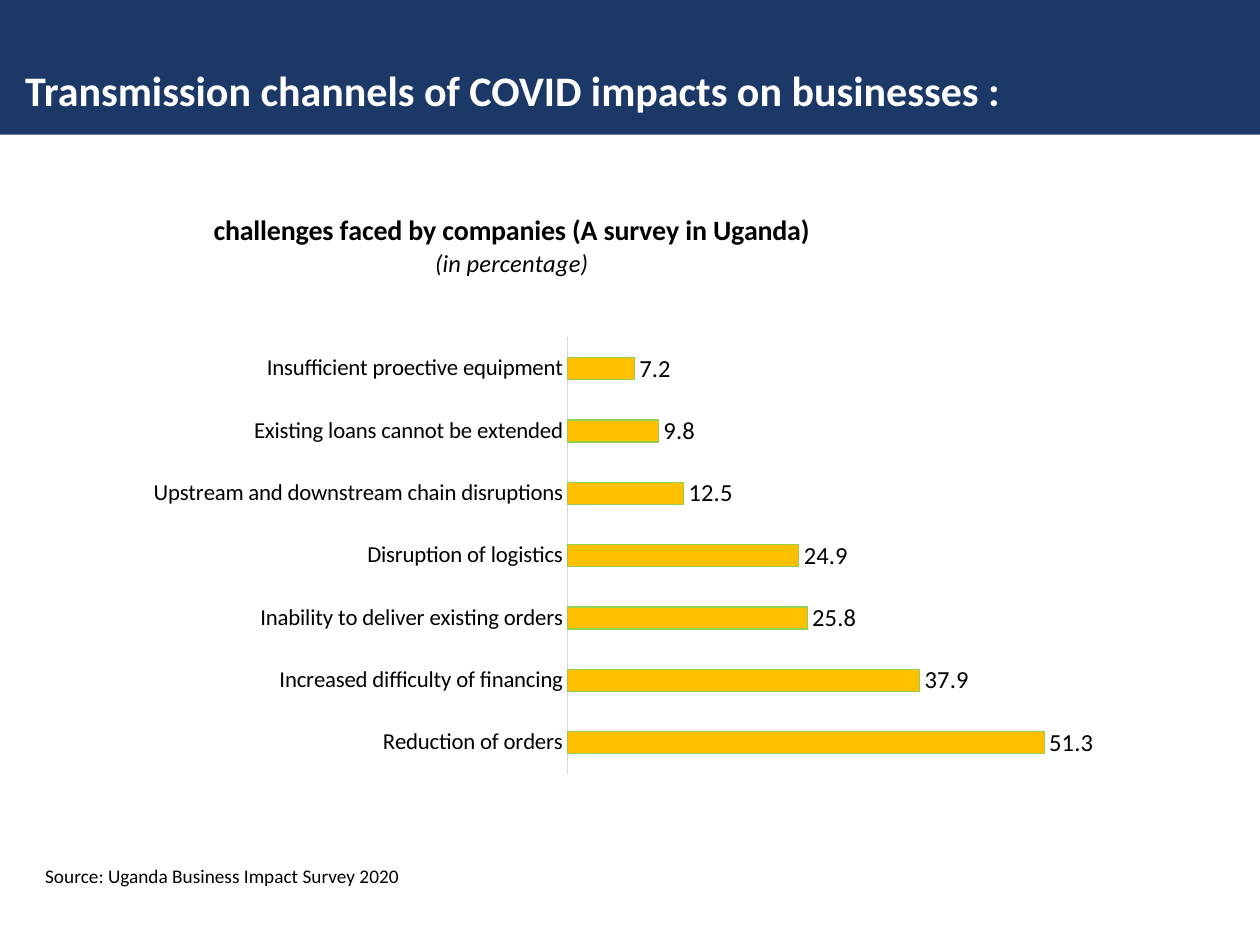
import pptx
import pptx.chart.data
import pptx.dml.color
import pptx.enum.chart
import pptx.enum.shapes
import pptx.enum.text
import pptx.oxml
import pptx.oxml.ns
import pptx.util

WIDTH, HEIGHT = pptx.util.Inches(10), pptx.util.Inches(7.5)
NAVY, GOLD, GREEN, GREY = "1C3867", "FFC000", "92D050", "D9D9D9"
BLACK, WHITE = "000000", "FFFFFF"


def color(hex_string):
    return pptx.dml.color.RGBColor.from_string(hex_string)


def set_layout(element, index, values):
    """Place a chart part by shares of the chart's size, given as layout tags."""
    for old in element.findall(pptx.oxml.ns.qn("c:layout")):
        element.remove(old)
    tags = "".join(f'<c:{tag} val="{value}"/>' for tag, value in values.items())
    element.insert(index, pptx.oxml.parse_xml(
        f'<c:layout {pptx.oxml.ns.nsdecls("c")}>'
        f'<c:manualLayout>{tags}</c:manualLayout></c:layout>'))


presentation = pptx.Presentation()
presentation.slide_width, presentation.slide_height = WIDTH, HEIGHT
slide = presentation.slides.add_slide(presentation.slide_layouts[6])

# Header band
band = slide.shapes.add_shape(
    pptx.enum.shapes.MSO_SHAPE.RECTANGLE, 0, 0, WIDTH, pptx.util.Inches(1.07))
band.shadow.inherit = False
band.fill.solid()
band.fill.fore_color.rgb = color(NAVY)
band.line.fill.background()

# Heading and source note: text, box in inches, size, bold, colour, margins
texts = [
    ("Transmission channels of COVID impacts on businesses :",
     (0.2, 0.28, 9.61, 0.87), 24, True, WHITE, (0, 0)),
    ("Source: Uganda Business Impact Survey 2020",
     (0.26, 6.81, 5.65, 0.29), 11, False, BLACK, (0.1, 0.05)),
]
for text, box, size, bold, text_color, (side, edge) in texts:
    frame = slide.shapes.add_textbox(*map(pptx.util.Inches, box)).text_frame
    frame_format = {
        "word_wrap": True,
        "vertical_anchor": pptx.enum.text.MSO_ANCHOR.MIDDLE if bold
        else pptx.enum.text.MSO_ANCHOR.TOP,
        "margin_left": pptx.util.Inches(side), "margin_right": pptx.util.Inches(side),
        "margin_top": pptx.util.Inches(edge), "margin_bottom": pptx.util.Inches(edge),
    }
    for name, value in frame_format.items():
        setattr(frame, name, value)
    run = frame.paragraphs[0].add_run()
    run.text = text
    for name, value in {"name": "Calibri", "size": pptx.util.Pt(size), "bold": bold}.items():
        setattr(run.font, name, value)
    run.font.color.rgb = color(text_color)

# Bar chart, listed from the bottom bar up
challenges = {
    "Reduction of orders": 51.3,
    "Increased difficulty of financing": 37.9,
    "Inability to deliver existing orders": 25.8,
    "Disruption of logistics": 24.9,
    "Upstream and downstream chain disruptions": 12.5,
    "Existing loans cannot be extended": 9.8,
    "Insufficient proective equipment": 7.2,
}
data = pptx.chart.data.CategoryChartData(number_format="0.0")
data.categories = list(challenges)
data.add_series("Series 1", list(challenges.values()))
chart = slide.shapes.add_chart(
    pptx.enum.chart.XL_CHART_TYPE.BAR_CLUSTERED,
    *map(pptx.util.Inches, (0.83, 1.41, 8.35, 4.88)), data).chart
chart.has_legend = False

title_frame = chart.chart_title.text_frame
title_lines = [
    ("challenges faced by companies (A survey in Uganda)", 16, True, False),
    ("(in percentage)", 14, False, True),
]
for index, (text, size, bold, italic) in enumerate(title_lines):
    paragraph = title_frame.add_paragraph() if index else title_frame.paragraphs[0]
    paragraph.alignment = pptx.enum.text.PP_ALIGN.CENTER
    run = paragraph.add_run()
    run.text = text
    title_format = {"name": "Calibri", "size": pptx.util.Pt(size),
                    "bold": bold, "italic": italic}
    for name, value in title_format.items():
        setattr(run.font, name, value)
    run.font.color.rgb = color(BLACK)
set_layout(chart.chart_title._element, 1,
           {"xMode": "edge", "yMode": "edge", "x": 0.1, "y": 0.05})
set_layout(chart._chartSpace.chart.plotArea, 0,
           {"layoutTarget": "inner", "xMode": "edge", "yMode": "edge",
            "x": 0.44, "y": 0.26, "w": 0.53, "h": 0.71})

category_axis, value_axis = chart.category_axis, chart.value_axis
category_axis.major_tick_mark = pptx.enum.chart.XL_TICK_MARK.NONE
category_axis.format.line.color.rgb = color(GREY)
category_axis.format.line.width = pptx.util.Pt(0.75)
value_format = {"visible": False, "has_major_gridlines": False,
                "minimum_scale": 0, "maximum_scale": 60}
for name, value in value_format.items():
    setattr(value_axis, name, value)

plot = chart.plots[0]
plot.gap_width = 182
plot.vary_by_categories = False
plot.has_data_labels = True
labels = plot.data_labels
label_format = {"show_value": True, "number_format": "0.0",
                "number_format_is_linked": False,
                "position": pptx.enum.chart.XL_LABEL_POSITION.OUTSIDE_END}
for name, value in label_format.items():
    setattr(labels, name, value)

for font, size in ((chart.font, 14), (category_axis.tick_labels.font, 13), (labels.font, 14)):
    font.name, font.size = "Calibri", pptx.util.Pt(size)
    font.color.rgb = color(BLACK)

bars = plot.series[0].format
bars.fill.solid()
bars.fill.fore_color.rgb = color(GOLD)
bars.line.color.rgb = color(GREEN)
bars.line.width = pptx.util.Pt(0.75)

presentation.save("out.pptx")
